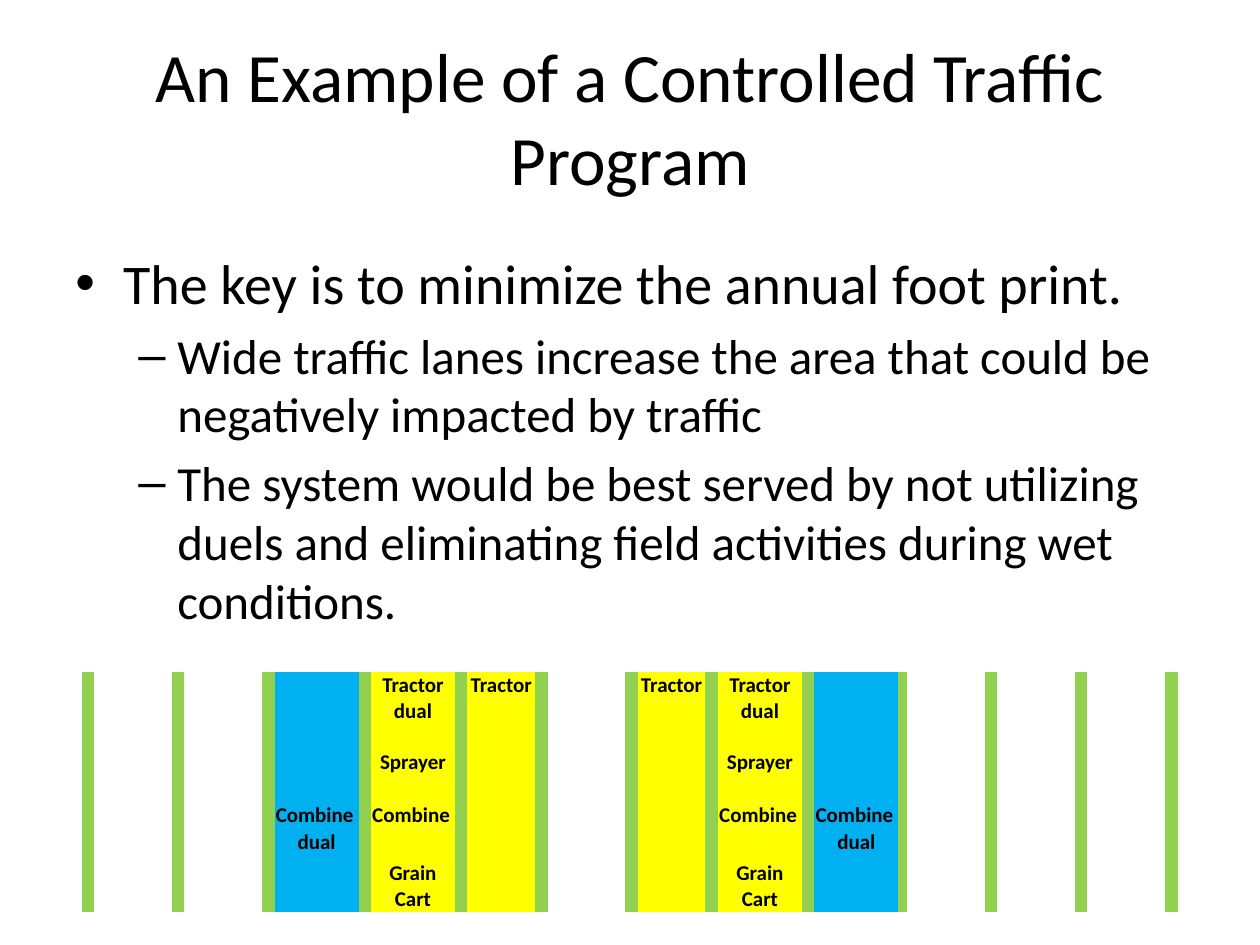
import pptx
import pptx.dml.color
import pptx.enum.text
import pptx.oxml.ns
import pptx.util
from lxml import etree
from pptx.util import Inches

BLACK = pptx.dml.color.RGBColor(0x00, 0x00, 0x00)
GREEN = pptx.dml.color.RGBColor(0x92, 0xD0, 0x50)
BLUE = pptx.dml.color.RGBColor(0x00, 0xB0, 0xF0)
YELLOW = pptx.dml.color.RGBColor(0xFF, 0xFF, 0x00)
FONT = "Calibri"
NO_GRID_STYLE = "{2D5ABB26-0587-4C30-8999-92F81FD0307C}"
ANCHOR = pptx.enum.text.MSO_ANCHOR
ALIGN = pptx.enum.text.PP_ALIGN

TITLE = "An Example of a Controlled Traffic Program"
POINTS = [
    (0, "The key is to minimize the annual foot print."),
    (1, "Wide traffic lanes increase the area that could be negatively impacted by traffic"),
    (1, "The system would be best served by not utilizing duels and eliminating "
        "field activities during wet conditions."),
]
POINT_LEVELS = [("•", 0.38, 0.38, 32), ("–", 0.81, 0.31, 28)]

COLUMN_WIDTHS = [
    0.28, 0.1, 0.62, 0.1, 0.62, 0.1, 0.67, 0.1, 0.67, 0.1, 0.54, 0.1, 0.62, 0.1,
    0.54, 0.1, 0.67, 0.1, 0.67, 0.07, 0.62, 0.1, 0.62, 0.1, 0.62, 0.1, 0.28,
]
ROW_HEIGHTS = [0.81, 0.43, 0.67]
COMBINE_LANE = (BLUE, ["", "Combine", "dual"])
SHARED_LANE = (YELLOW, ["Tractor dual\nSprayer", "Combine", "Grain Cart"])
TRACTOR_LANE = (YELLOW, ["Tractor", "", ""])
LANES = {
    6: COMBINE_LANE, 8: SHARED_LANE, 10: TRACTOR_LANE,
    14: TRACTOR_LANE, 16: SHARED_LANE, 18: COMBINE_LANE,
}
TOP_LABELS = ("Tractor", "dual")


def format_runs(paragraph, size, bold=False):
    for run in paragraph.runs:
        run.font.name = FONT
        run.font.size = pptx.util.Pt(size)
        run.font.bold = bold
        run.font.color.rgb = BLACK


def place_title(slide, left, top, width, height):
    title = slide.shapes.title
    title.left, title.top, title.width, title.height = left, top, width, height
    frame = title.text_frame
    frame.text = TITLE
    frame.auto_size = pptx.enum.text.MSO_AUTO_SIZE.NONE
    frame.vertical_anchor = ANCHOR.MIDDLE
    frame.paragraphs[0].alignment = ALIGN.CENTER
    format_runs(frame.paragraphs[0], 39.6)


def add_bullet(paragraph, symbol, indent, hanging):
    properties = paragraph._p.get_or_add_pPr()
    properties.set("marL", str(Inches(indent)))
    properties.set("indent", str(-Inches(hanging)))
    font = etree.SubElement(properties, pptx.oxml.ns.qn("a:buFont"))
    font.set("typeface", "Arial")
    bullet = etree.SubElement(properties, pptx.oxml.ns.qn("a:buChar"))
    bullet.set("char", symbol)


def place_points(slide, left, top, width, height):
    frame = slide.shapes.add_textbox(left, top, width, height).text_frame
    frame.word_wrap = True
    frame.text = "\n".join(text for _, text in POINTS)
    for index, (level, _) in enumerate(POINTS):
        paragraph = frame.paragraphs[index]
        symbol, indent, hanging, size = POINT_LEVELS[level]
        paragraph.level = level
        add_bullet(paragraph, symbol, indent, hanging)
        if index:
            paragraph.space_before = pptx.util.Pt(size * 0.2)
        format_runs(paragraph, size)


def fill_cell(cell, color, label):
    cell.margin_left = cell.margin_right = cell.margin_top = Inches(0.01)
    cell.margin_bottom = 0
    if color is None:
        cell.fill.background()
    else:
        cell.fill.solid()
        cell.fill.fore_color.rgb = color
    if not label:
        return
    cell.text_frame.text = label
    cell.vertical_anchor = ANCHOR.TOP if label in TOP_LABELS else ANCHOR.BOTTOM
    for index, paragraph in enumerate(cell.text_frame.paragraphs):
        paragraph.alignment = ALIGN.LEFT if label == "Combine" else ALIGN.CENTER
        if index:
            paragraph.space_before = pptx.util.Pt(14.4)
        format_runs(paragraph, 12, bold=True)


def place_lanes(slide, left, top, width, height):
    table = slide.shapes.add_table(
        len(ROW_HEIGHTS), len(COLUMN_WIDTHS), left, top, width, height).table
    table.first_row = table.horz_banding = False
    table._tbl.tblPr.find(pptx.oxml.ns.qn("a:tableStyleId")).text = NO_GRID_STYLE
    for column, share in zip(table.columns, COLUMN_WIDTHS):
        column.width = int(width * share / sum(COLUMN_WIDTHS))
    for row, share in zip(table.rows, ROW_HEIGHTS):
        row.height = int(height * share / sum(ROW_HEIGHTS))
    for column in range(len(COLUMN_WIDTHS)):
        color, labels = LANES.get(column, (GREEN if column % 2 else None, [""] * 3))
        for row, label in enumerate(labels):
            fill_cell(table.cell(row, column), color, label)


def main():
    presentation = pptx.Presentation()
    presentation.slide_width = Inches(10)
    presentation.slide_height = Inches(7.5)
    slide = presentation.slides.add_slide(presentation.slide_layouts[5])
    place_title(slide, Inches(0.5), Inches(0.3), Inches(9), Inches(1.25))
    place_points(slide, Inches(0.5), Inches(1.92), Inches(9), Inches(5.14))
    place_lanes(slide, Inches(0.37), Inches(5.33), Inches(9.26), Inches(1.91))
    presentation.save("out.pptx")


if __name__ == "__main__":
    main()
